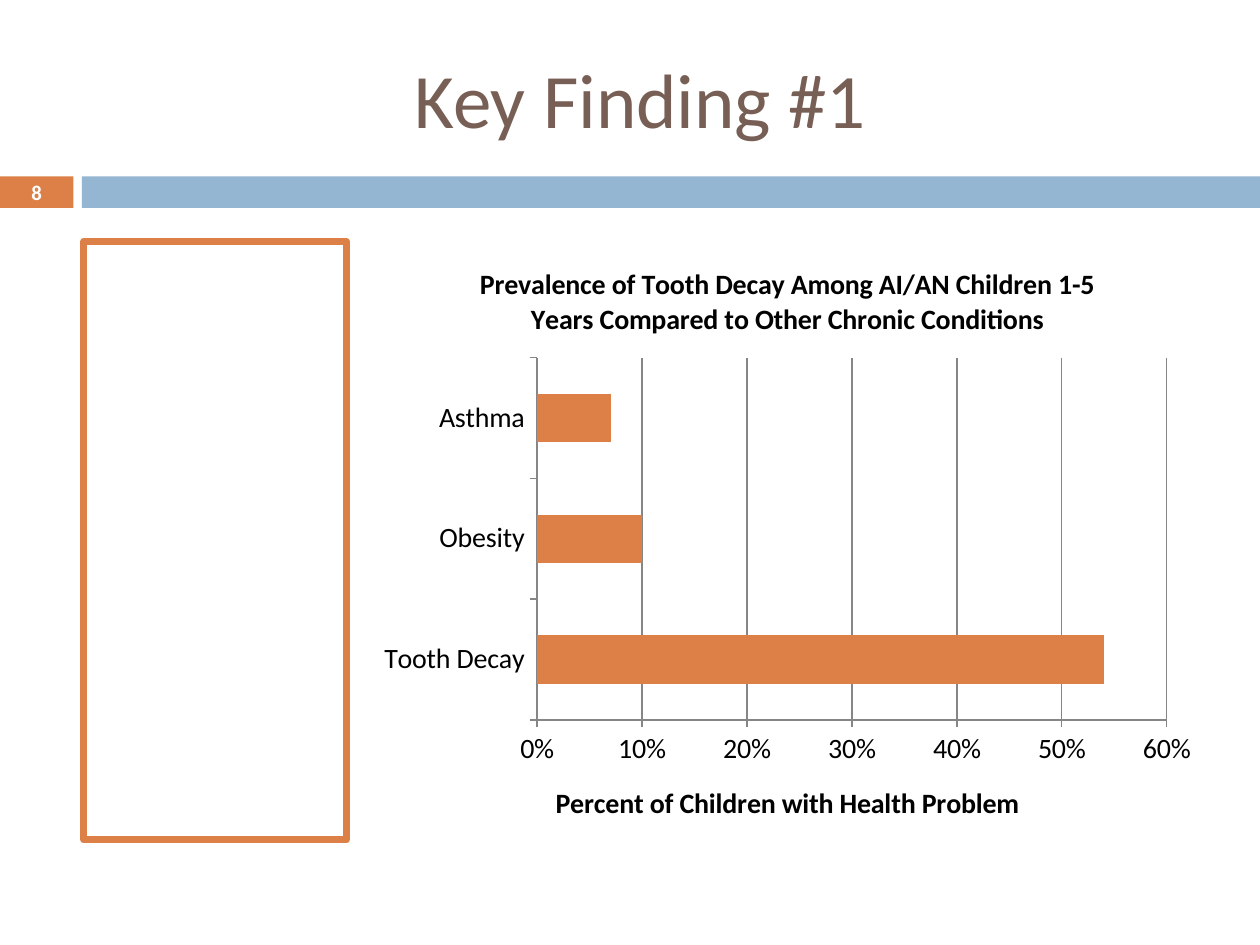
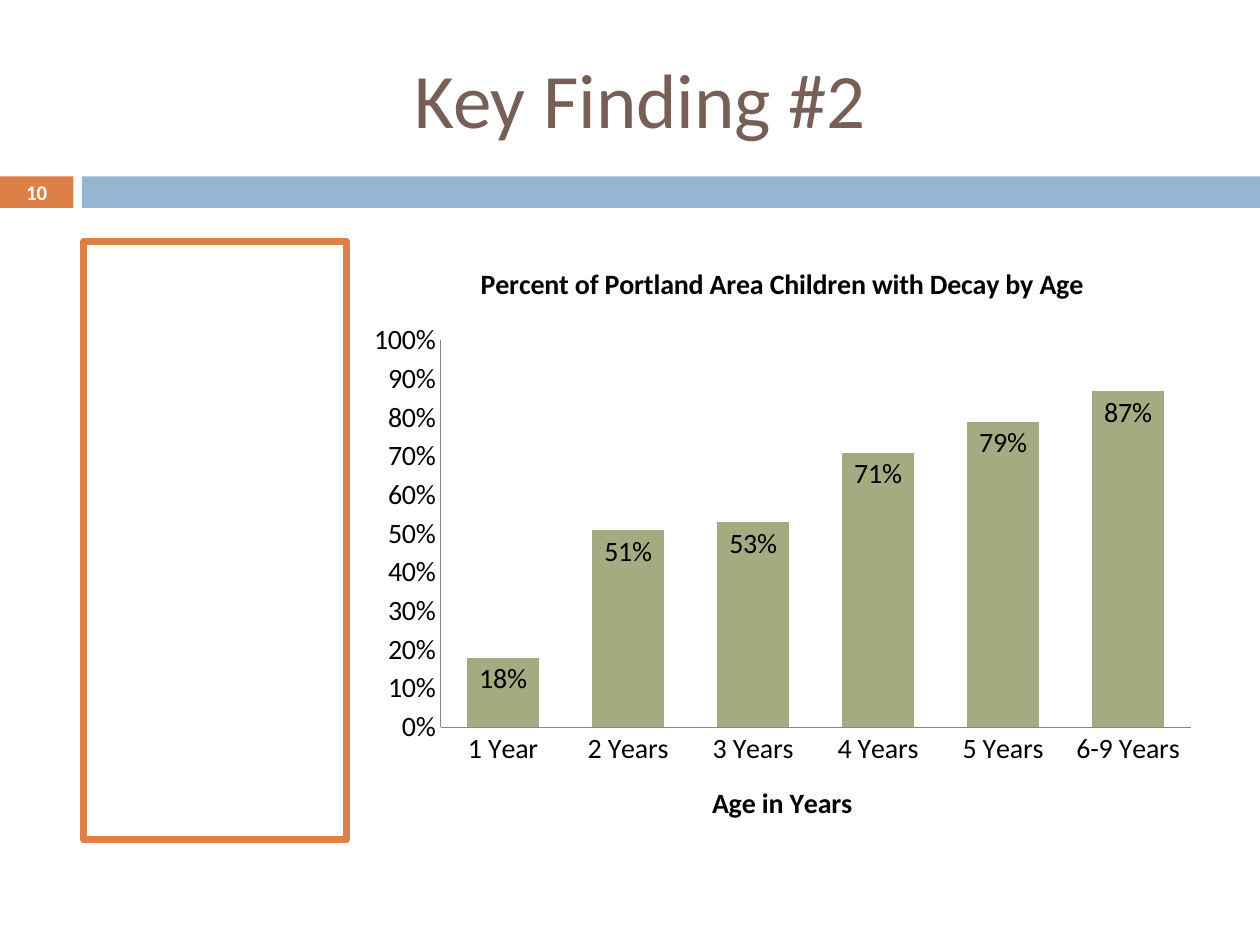
from dataclasses import dataclass
from typing import Optional

from pptx import Presentation
from pptx.chart.axis import _BaseAxis
from pptx.chart.chart import Chart
from pptx.chart.data import CategoryChartData
from pptx.dml.color import RGBColor
from pptx.enum.chart import XL_CHART_TYPE, XL_LABEL_POSITION, XL_TICK_MARK
from pptx.enum.shapes import MSO_SHAPE
from pptx.enum.text import MSO_ANCHOR, PP_ALIGN
from pptx.slide import Slide
from pptx.text.text import Font, TextFrame
from pptx.util import Pt


@dataclass(frozen=True)
class Theme:
    font: str = "Calibri"
    orange: str = "DD8047"
    blue: str = "94B6D2"
    green: str = "A5AB81"
    brown: str = "775F55"
    white: str = "FFFFFF"
    black: str = "000000"
    gray: str = "868686"
    title_size: float = 44
    number_size: float = 11.9
    chart_size: float = 16
    panel_line: float = 4
    axis_line: float = 0.75


@dataclass(frozen=True)
class Box:
    left: float
    top: float
    width: float
    height: float

    def lengths(self) -> tuple[Pt, ...]:
        return Pt(self.left), Pt(self.top), Pt(self.width), Pt(self.height)


@dataclass(frozen=True)
class Finding:
    title: str
    number: int
    chart_box: Box
    chart_type: XL_CHART_TYPE
    chart_title: str
    values: dict[str, float]
    color: str
    maximum: float
    gap: int
    tick: XL_TICK_MARK
    overlap: int = 0
    category_title: Optional[str] = None
    value_title: Optional[str] = None
    gridlines: bool = False
    labels: bool = False


THEME = Theme()

# Shared frame
SLIDE_W, SLIDE_H = 720, 540
MARKER = Box(0, 100.8, 42, 18)
BAND = Box(46.8, 100.8, SLIDE_W - 46.8, 18)
NUMBER = Box(0, 100.1, 42, 19.4)
TITLE = Box(48, 21.6, 636, 68.4)
PANEL = Box(48, 138, 150, 342)

FINDINGS = [
    Finding(
        title="Key Finding #1",
        number=8,
        chart_box=Box(210, 138, 480, 348),
        chart_type=XL_CHART_TYPE.BAR_CLUSTERED,
        chart_title="Prevalence of Tooth Decay Among AI/AN Children 1-5 "
                    "Years Compared to Other Chronic Conditions",
        values={"Tooth Decay": 0.54, "Obesity": 0.1, "Asthma": 0.07},
        color=THEME.orange,
        maximum=0.6,
        gap=150,
        tick=XL_TICK_MARK.OUTSIDE,
        value_title="Percent of Children with Health Problem",
        gridlines=True,
    ),
    Finding(
        title="Key Finding #2",
        number=10,
        chart_box=Box(204, 138, 486, 348),
        chart_type=XL_CHART_TYPE.COLUMN_CLUSTERED,
        chart_title="Percent of Portland Area Children with Decay by Age",
        values={"1 Year": 0.18, "2 Years": 0.51, "3 Years": 0.53,
                "4 Years": 0.71, "5 Years": 0.79, "6-9 Years": 0.87},
        color=THEME.green,
        maximum=1,
        gap=75,
        tick=XL_TICK_MARK.NONE,
        overlap=-25,
        category_title="Age in Years",
        labels=True,
    ),
]


def rgb(color: str) -> RGBColor:
    return RGBColor.from_string(color)


def style_font(font: Font, size: float, color: str, bold: bool = False) -> None:
    font.name = THEME.font
    font.size = Pt(size)
    font.bold = bold
    font.color.rgb = rgb(color)


def write(tf: TextFrame, text: str, size: float, color: str, bold: bool = False) -> None:
    p = tf.paragraphs[0]
    p.alignment = PP_ALIGN.CENTER
    r = p.add_run()
    r.text = text
    style_font(r.font, size, color, bold)


def add_text(s: Slide, box: Box, text: str, size: float, color: str, bold: bool = False) -> None:
    tf = s.shapes.add_textbox(*box.lengths()).text_frame
    tf.word_wrap = True
    tf.vertical_anchor = MSO_ANCHOR.MIDDLE
    tf.margin_top = tf.margin_bottom = Pt(0)
    write(tf, text, size, color, bold)


def add_rect(s: Slide, box: Box, fill: Optional[str] = None, line: Optional[str] = None) -> None:
    sp = s.shapes.add_shape(MSO_SHAPE.RECTANGLE, *box.lengths())
    sp.shadow.inherit = False
    if fill:
        sp.fill.solid()
        sp.fill.fore_color.rgb = rgb(fill)
    else:
        sp.fill.background()
    if line:
        sp.line.color.rgb = rgb(line)
        sp.line.width = Pt(THEME.panel_line)
    else:
        sp.line.fill.background()


def style_axis(axis: _BaseAxis, title: Optional[str], tick: XL_TICK_MARK, gridlines: bool) -> None:
    axis.major_tick_mark = tick
    axis.minor_tick_mark = XL_TICK_MARK.NONE
    axis.has_major_gridlines = gridlines
    lines = [axis.format.line]
    if gridlines:
        lines.append(axis.major_gridlines.format.line)
    for line in lines:
        line.color.rgb = rgb(THEME.gray)
        line.width = Pt(THEME.axis_line)
    style_font(axis.tick_labels.font, THEME.chart_size, THEME.black)
    axis.has_title = title is not None
    if title:
        write(axis.axis_title.text_frame, title, THEME.chart_size, THEME.black, bold=True)


def style_bars(chart: Chart, f: Finding) -> None:
    plot = chart.plots[0]
    plot.gap_width = f.gap
    plot.overlap = f.overlap
    plot.vary_by_categories = False
    fill = plot.series[0].format.fill
    fill.solid()
    fill.fore_color.rgb = rgb(f.color)
    if f.labels:
        plot.has_data_labels = True
        labels = plot.data_labels
        labels.show_value = True
        labels.position = XL_LABEL_POSITION.INSIDE_END
        labels.number_format = "0%"
        labels.number_format_is_linked = False
        style_font(labels.font, THEME.chart_size, THEME.black)


def add_finding_chart(s: Slide, f: Finding) -> None:
    data = CategoryChartData(number_format="0%")
    data.categories = list(f.values)
    data.add_series("Series 1", list(f.values.values()))
    chart = s.shapes.add_chart(f.chart_type, *f.chart_box.lengths(), data).chart
    style_font(chart.font, THEME.chart_size, THEME.black)
    chart.has_legend = False
    chart.has_title = True
    write(chart.chart_title.text_frame, f.chart_title, THEME.chart_size, THEME.black, bold=True)

    style_axis(chart.category_axis, f.category_title, f.tick, gridlines=False)
    axis = chart.value_axis
    style_axis(axis, f.value_title, f.tick, f.gridlines)
    axis.minimum_scale = 0
    axis.maximum_scale = f.maximum
    axis.major_unit = 0.1
    axis.tick_labels.number_format = "0%"
    axis.tick_labels.number_format_is_linked = False
    style_bars(chart, f)


def add_finding(prs: Presentation, f: Finding) -> None:
    s = prs.slides.add_slide(prs.slide_layouts[6])
    # Bands, title and slide number
    add_rect(s, MARKER, fill=THEME.orange)
    add_rect(s, BAND, fill=THEME.blue)
    add_text(s, TITLE, f.title, THEME.title_size, THEME.brown)
    add_text(s, NUMBER, str(f.number), THEME.number_size, THEME.white, bold=True)
    # Side panel and chart
    add_rect(s, PANEL, line=THEME.orange)
    add_finding_chart(s, f)


def main() -> None:
    prs = Presentation()
    prs.slide_width, prs.slide_height = Pt(SLIDE_W), Pt(SLIDE_H)
    for finding in FINDINGS:
        add_finding(prs, finding)
    prs.save("out.pptx")


if __name__ == "__main__":
    main()
